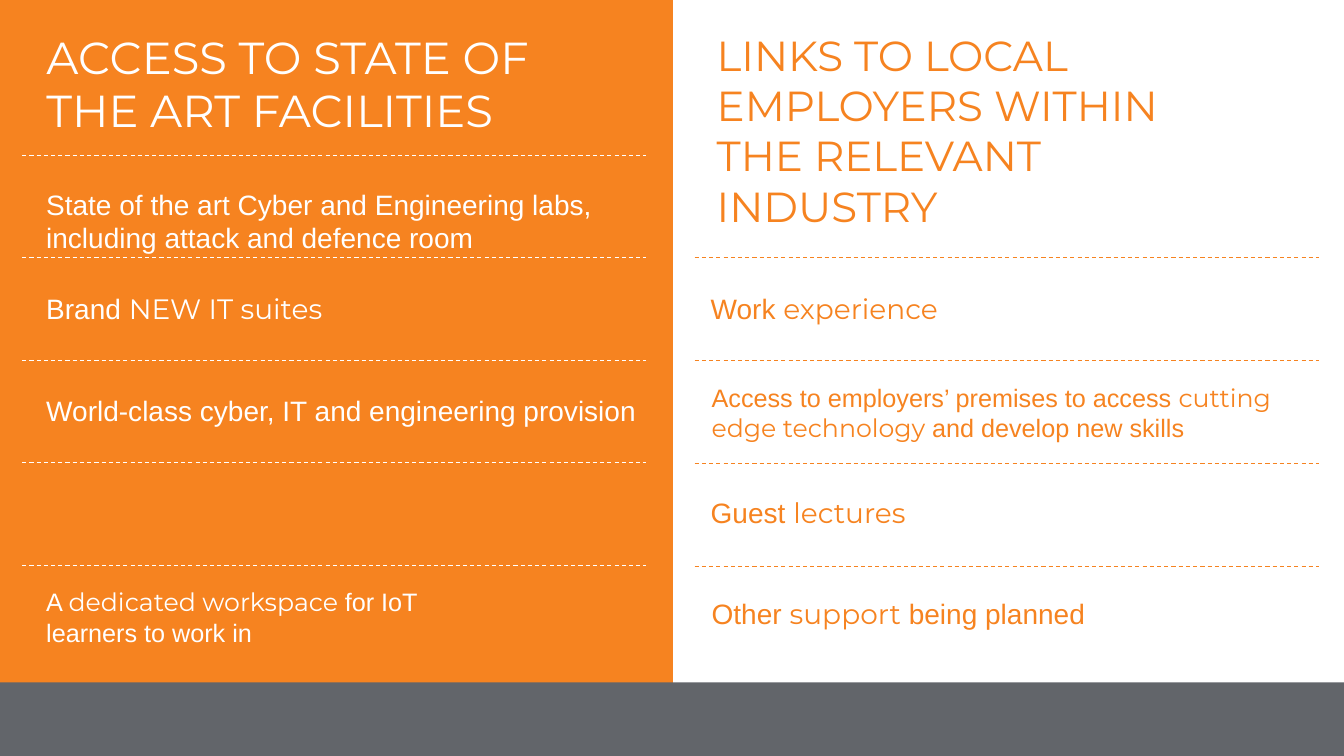
"""Build a two-column slide on facilities and employer links."""
import pptx
import pptx.util
from lxml import etree
from pptx.dml.color import RGBColor
from pptx.enum.dml import MSO_LINE
from pptx.enum.shapes import MSO_CONNECTOR, MSO_SHAPE
from pptx.enum.text import MSO_ANCHOR, MSO_AUTO_SIZE, PP_ALIGN
from pptx.oxml.ns import qn

Inches = pptx.util.Inches
ORANGE, GREY, WHITE = "F68320", "62656A", "FFFFFF"
BODY, DISPLAY = "Arial", "Montserrat"

BANDS = [
    ((0, 0, 6.67, 7.5), ORANGE, True),
    ((0, 6.77, 13.33, 0.74), GREY, False),
]
TITLE = ((0.36, 0.24, 5.75, 1.18), 32, WHITE, [
    [("ACCESS TO STATE OF", DISPLAY)],
    [("THE ART FACILITIES", DISPLAY)],
])
TEXTS = [
    ((0.36, 1.81, 6.94, 0.77), 20, WHITE, [
        [("State of the art Cyber and Engineering labs,", BODY)],
        [("including attack and defence room", BODY)],
    ]),
    ((0.36, 2.84, 3.18, 0.44), 20, WHITE, [
        [("Brand ", BODY), ("NEW IT suites", DISPLAY)],
    ]),
    ((0.36, 3.85, 6.18, 0.44), 20, WHITE, [
        [("World-class cyber, IT and engineering provision", BODY)],
    ]),
    ((0.36, 5.77, 4.28, 0.71), 18, WHITE, [
        [("A ", BODY), ("dedicated workspace ", DISPLAY), ("for IoT", BODY)],
        [("learners to work in", BODY)],
    ]),
    ((7.01, 0.24, 5.3, 2.12), 30, ORANGE, [
        [("LINKS TO LOCAL", DISPLAY)],
        [("EMPLOYERS WITHIN THE RELEVANT INDUSTRY", DISPLAY)],
    ]),
    ((6.95, 2.84, 2.64, 0.77), 20, ORANGE, [
        [("Work ", BODY), ("experience", DISPLAY)],
    ]),
    ((6.96, 3.74, 6.44, 0.71), 18, ORANGE, [
        [("Access to employers’ premises to access ", BODY), ("cutting", DISPLAY)],
        [("edge technology ", DISPLAY), ("and develop new skills", BODY)],
    ]),
    ((6.95, 4.87, 2.29, 0.44), 20, ORANGE, [
        [("Guest ", BODY), ("lectures", DISPLAY)],
    ]),
    ((6.96, 5.87, 4.08, 0.44), 20, ORANGE, [
        [("Other ", BODY), ("support", DISPLAY), (" being planned", BODY)],
    ]),
]
DIVIDER_WIDTH = 6.19
DIVIDERS = [
    (0.22, WHITE, [1.54, 2.55, 3.58, 4.59, 5.61]),
    (6.89, ORANGE, [2.55, 3.58, 4.6, 5.62]),
]


def rgb(value):
    return RGBColor.from_string(value)


def add_band(s, box, color, outlined):
    sp = s.shapes.add_shape(MSO_SHAPE.RECTANGLE, *map(Inches, box))
    sp.shadow.inherit = False
    sp.fill.solid()
    sp.fill.fore_color.rgb = rgb(color)
    if outlined:
        sp.line.color.rgb = rgb(color)
        sp.line.width = pptx.util.Pt(1)
    else:
        sp.line.fill.background()
    return sp


def add_divider(s, x, y, color):
    line = s.shapes.add_connector(
        MSO_CONNECTOR.STRAIGHT, Inches(x), Inches(y),
        Inches(x + DIVIDER_WIDTH), Inches(y))
    line.line.color.rgb = rgb(color)
    line.line.width = pptx.util.Pt(0.75)
    line.line.dash_style = MSO_LINE.DASH
    etree.SubElement(line.element.spPr, qn("a:effectLst"))


def write_text(sp, size, color, paragraphs):
    tf = sp.text_frame
    tf.word_wrap = True
    tf.auto_size = MSO_AUTO_SIZE.NONE
    tf.vertical_anchor = MSO_ANCHOR.TOP
    for i, runs in enumerate(paragraphs):
        p = tf.add_paragraph() if i else tf.paragraphs[0]
        p.alignment = PP_ALIGN.LEFT
        p.font.size = pptx.util.Pt(size)
        p.font.color.rgb = rgb(color)
        fonts = {font for _, font in runs}
        if len(fonts) == 1:
            p.font.name = runs[0][1]
        for text, font in runs:
            r = p.add_run()
            r.text = text
            if len(fonts) > 1:
                r.font.name = font


def main():
    prs = pptx.Presentation()
    prs.slide_width, prs.slide_height = Inches(13.33), Inches(7.5)
    s = prs.slides.add_slide(prs.slide_layouts[5])

    bands = [add_band(s, *band) for band in BANDS]

    title = s.shapes.title
    box, *content = TITLE
    title.left, title.top, title.width, title.height = map(Inches, box)
    write_text(title, *content)
    bands[-1].element.addnext(title.element)

    for x, color, rows in DIVIDERS:
        for y in rows:
            add_divider(s, x, y, color)
    for box, *content in TEXTS:
        write_text(s.shapes.add_textbox(*map(Inches, box)), *content)

    prs.save("out.pptx")


if __name__ == "__main__":
    main()
